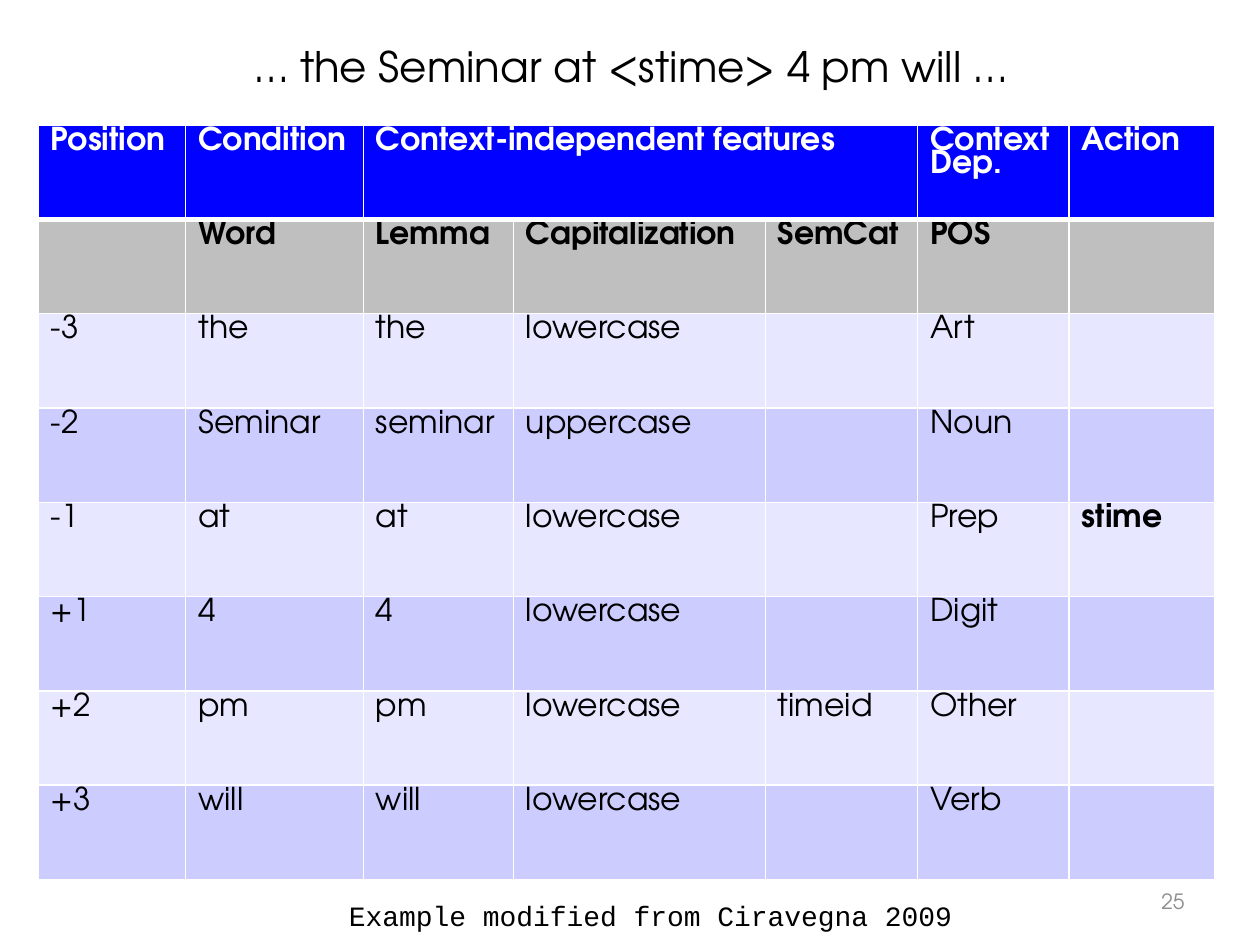
import pptx
import pptx.util
import pptx.dml.color
import pptx.enum.text
import pptx.oxml
import pptx.oxml.ns

Pt = pptx.util.Pt
ALIGN = pptx.enum.text.PP_ALIGN
ANCHOR = pptx.enum.text.MSO_ANCHOR

COLOURS = {
    "header": "0001FF", "subheader": "BFBFBF", "light": "E7E7FF", "dark": "CCCCFF",
    "white": "FFFFFF", "black": "000000", "muted": "8C8C8C",
}
SANS = "TeX Gyre Adventor"
MONO = "Courier New"

COLUMN_WIDTHS = [84.24, 101.52, 85.68, 144, 87.12, 86.4, 83.52]
ROW_HEIGHT = 53.9
FEATURES = [
    ["Position", "Condition", "Context-independent features", "", "", "Context Dep.", "Action"],
    ["", "Word", "Lemma", "Capitalization", "SemCat", "POS", ""],
    ["-3", "the", "the", "lowercase", "", "Art", ""],
    ["-2", "Seminar", "seminar", "uppercase", "", "Noun", ""],
    ["-1", "at", "at", "lowercase", "", "Prep", "stime"],
    ["+1", "4", "4", "lowercase", "", "Digit", ""],
    ["+2", "pm", "pm", "lowercase", "timeid", "Other", ""],
    ["+3", "will", "will", "lowercase", "", "Verb", ""],
]
ACTION_COLUMN = 6


class SlideBuilder:
    def __init__(self, slide):
        self.slide = slide

    def fill_frame(self, frame, text, colour, align=None, line_spacing=None, **font_format):
        paragraph = frame.paragraphs[0]
        paragraph.alignment = align
        paragraph.line_spacing = line_spacing
        run = paragraph.add_run()
        run.text = text
        for attribute, value in font_format.items():
            setattr(run.font, attribute, value)
        run.font.color.rgb = pptx.dml.color.RGBColor.from_string(COLOURS[colour])

    def text(self, left, top, width, height, text, colour,
             anchor=ANCHOR.TOP, align=None, **font_format):
        frame = self.slide.shapes.add_textbox(
            Pt(left), Pt(top), Pt(width), Pt(height)).text_frame
        frame.word_wrap = True
        frame.vertical_anchor = anchor
        self.fill_frame(frame, text, colour, align, **font_format)

    def borders(self, cell, widths):
        """Draw white cell edges; widths maps an edge tag to points."""
        properties = cell._tc.get_or_add_tcPr()
        for position, (edge, width) in enumerate(widths.items()):
            properties.insert(position, pptx.oxml.parse_xml(
                f'<a:{edge} {pptx.oxml.ns.nsdecls("a")} w="{Pt(width)}"><a:solidFill>'
                f'<a:srgbClr val="{COLOURS["white"]}"/></a:solidFill></a:{edge}>'))

    def table(self, left, top, column_widths, row_height, rows):
        table = self.slide.shapes.add_table(
            len(rows), len(column_widths), Pt(left), Pt(top),
            Pt(sum(column_widths)), Pt(row_height * len(rows))).table
        for column, width in zip(table.columns, column_widths):
            column.width = Pt(width)
        for row_index, texts in enumerate(rows):
            table.rows[row_index].height = Pt(row_height)
            for column_index, text in enumerate(texts):
                self.feature_cell(table.cell(row_index, column_index),
                                  row_index, column_index, text)
        table.cell(0, 2).merge(table.cell(0, 4))

    def feature_cell(self, cell, row, column, text):
        fill = ["header", "subheader"][row] if row < 2 else ["light", "dark"][row % 2]
        cell.fill.solid()
        cell.fill.fore_color.rgb = pptx.dml.color.RGBColor.from_string(COLOURS[fill])
        self.borders(cell, {"lnL": 1, "lnR": 1,
                            "lnT": 3 if row == 1 else 1, "lnB": 3 if row == 0 else 1})
        if text:
            self.fill_frame(cell.text_frame, text, "white" if row == 0 else "black",
                            line_spacing=0.8, name=SANS, size=Pt(18),
                            bold=row < 2 or column == ACTION_COLUMN)


def main():
    deck = pptx.Presentation()
    deck.slide_width, deck.slide_height = Pt(720), Pt(540)
    builder = SlideBuilder(deck.slides.add_slide(deck.slide_layouts[6]))
    builder.text(516, 500.4, 168, 28.8, "25", "muted", ANCHOR.MIDDLE, ALIGN.RIGHT,
                 name=SANS, size=Pt(12))
    builder.table(21.9, 71.5, COLUMN_WIDTHS, ROW_HEIGHT, FEATURES)
    builder.text(138.24, 19.44, 556.56, 36, "… the Seminar at <stime> 4 pm will …", "black",
                 name=SANS, size=Pt(24))
    builder.text(192.24, 509.76, 367.92, 26.64, "Example modified from Ciravegna 2009", "black",
                 name=MONO, size=Pt(16))
    deck.save("out.pptx")


if __name__ == "__main__":
    main()
